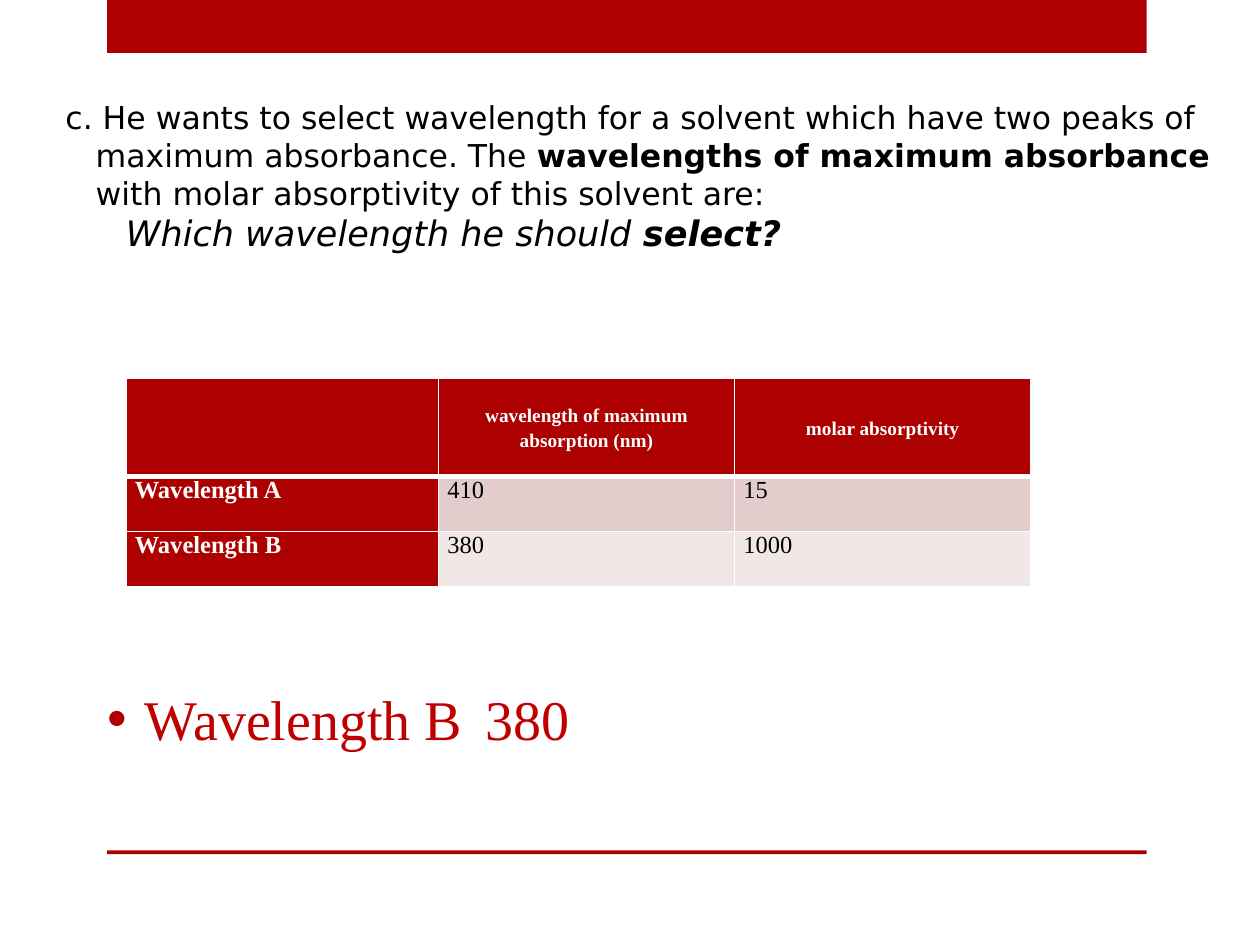
import pptx
import pptx.dml.color
import pptx.enum.shapes
import pptx.enum.text
import pptx.oxml
import pptx.util
import lxml.etree

RED, DARK, WHITE, BLACK = "AD0101", "C00000", "FFFFFF", "000000"
SERIF, SANS = "Times New Roman", "DejaVu Sans"
NS = "http://schemas.openxmlformats.org/drawingml/2006/main"
ALIGN = pptx.enum.text.PP_ALIGN
MID = pptx.enum.text.MSO_ANCHOR.MIDDLE
TOP = pptx.enum.text.MSO_ANCHOR.TOP


def color(code):
    return pptx.dml.color.RGBColor.from_string(code)


def paint(item, code):
    item.fill.solid()
    item.fill.fore_color.rgb = color(code)


def write(para, text, size=18, font=SERIF, ink=BLACK, bold=False, slant=False):
    run = para.add_run()
    run.text = text
    face = run.font
    face.size, face.name = pptx.util.Pt(size), font
    face.bold, face.italic = bold, slant
    face.color.rgb = color(ink)


def indent(para, left, first=0):
    """Set the left margin and first-line offset in inches."""
    props = para._p.get_or_add_pPr()
    props.set("marL", str(pptx.util.Inches(left)))
    props.set("indent", str(pptx.util.Inches(first)))
    return props


def bullet(para, code, gap):
    props = indent(para, gap, -gap)
    for part in (f'<a:buClr xmlns:a="{NS}"><a:srgbClr val="{code}"/></a:buClr>',
                 f'<a:buFont xmlns:a="{NS}" typeface="Arial"/>',
                 f'<a:buChar xmlns:a="{NS}" char="•"/>'):
        props.append(pptx.oxml.parse_xml(part))


def border(cell, code, **widths):
    """Draw cell edges; widths are points keyed by L, R, T, B in that order."""
    props = cell._tc.get_or_add_tcPr()
    for spot, (side, width) in enumerate(widths.items()):
        props.insert(spot, pptx.oxml.parse_xml(
            f'<a:ln{side} xmlns:a="{NS}" w="{pptx.util.Pt(width)}"><a:solidFill>'
            f'<a:srgbClr val="{code}"/></a:solidFill></a:ln{side}>'))


class Deck:
    """Holds the slide and a grid of 100 columns by 75 rows."""

    def __init__(self):
        self.file = pptx.Presentation()
        self.file.slide_width = pptx.util.Inches(10)
        self.file.slide_height = pptx.util.Inches(7.5)
        self.slide = self.file.slides.add_slide(self.file.slide_layouts[6])

    def place(self, col, row, wide, high):
        x, y = self.file.slide_width / 100, self.file.slide_height / 75
        return [round(n) for n in (col * x, row * y, wide * x, high * y)]

    def bar(self, *area):
        kind = pptx.enum.shapes.MSO_SHAPE.RECTANGLE
        shape = self.slide.shapes.add_shape(kind, *self.place(*area))
        shape.shadow.inherit = False
        paint(shape, RED)
        shape.line.fill.background()

    def text(self, *area):
        frame = self.slide.shapes.add_textbox(*self.place(*area)).text_frame
        frame.word_wrap = True
        frame.vertical_anchor = MID
        frame.margin_left = frame.margin_right = 0
        frame.margin_top = frame.margin_bottom = 0
        return frame

    def table(self, col, row, wides, highs, data):
        area = self.place(col, row, sum(wides), sum(highs))
        grid = self.slide.shapes.add_table(len(highs), len(wides), *area).table
        grid.first_col = True
        for part, wide in zip(grid.columns, wides):
            part.width = self.place(0, 0, wide, 0)[2]
        for part, high in zip(grid.rows, highs):
            part.height = self.place(0, 0, 0, high)[3]
        for r, line in enumerate(data):
            for c, text in enumerate(line):
                self.cell(grid.cell(r, c), text, r, c)

    def cell(self, cell, text, r, c):
        head = r == 0
        label = head or c == 0
        paint(cell, RED if label else ("E3CCCC", "F1E7E7")[r - 1])
        border(cell, WHITE, L=1, R=1, T=3 if r == 1 else 1, B=3 if head else 1)
        cell.margin_left = cell.margin_right = pptx.util.Inches(0.07)
        cell.margin_top = cell.margin_bottom = 0
        cell.vertical_anchor = MID if head else TOP
        para = cell.text_frame.paragraphs[0]
        para.alignment = ALIGN.CENTER if head else ALIGN.JUSTIFY
        if head:
            para.line_spacing = 1.15
        else:
            para.space_before = pptx.util.Pt(3)
        if text:
            write(para, text, size=11 if head else 14,
                  ink=WHITE if label else BLACK, bold=label)


def main():
    deck = Deck()
    deck.bar(8.5, 0, 82.5, 4.2)
    deck.bar(8.5, 67.5, 82.5, 0.3)

    answer = deck.text(8.5, 54, 80, 6).paragraphs[0]
    bullet(answer, RED, 0.3)
    write(answer, "Wavelength B\t380", size=32, ink=DARK)

    deck.table(10, 30, (24.8, 23.5, 23.5), (7.8, 4.4, 4.4), (
        ("", "wavelength of maximum absorption (nm)", "molar absorptivity"),
        ("Wavelength A", "410", "15"),
        ("Wavelength B", "380", "1000")))

    # Each line: indent in inches, size, slant, plain words, bold words
    lines = (
        (0, 18, False, "c. He wants to select wavelength for a solvent "
         "which have two peaks of", ""),
        (0.24, 18, False, "maximum absorbance. The ",
         "wavelengths of maximum absorbance"),
        (0.24, 18, False, "with molar absorptivity of this solvent are:", ""),
        (0.48, 20, True, "Which wavelength he should ", "select?"))
    frame = deck.text(5.2, 7.2, 94, 13.5)
    for spot, (left, size, slant, plain, strong) in enumerate(lines):
        para = frame.add_paragraph() if spot else frame.paragraphs[0]
        indent(para, left)
        write(para, plain, size=size, font=SANS, slant=slant)
        if strong:
            write(para, strong, size=size, font=SANS, slant=slant, bold=True)

    deck.file.save("out.pptx")


if __name__ == "__main__":
    main()
